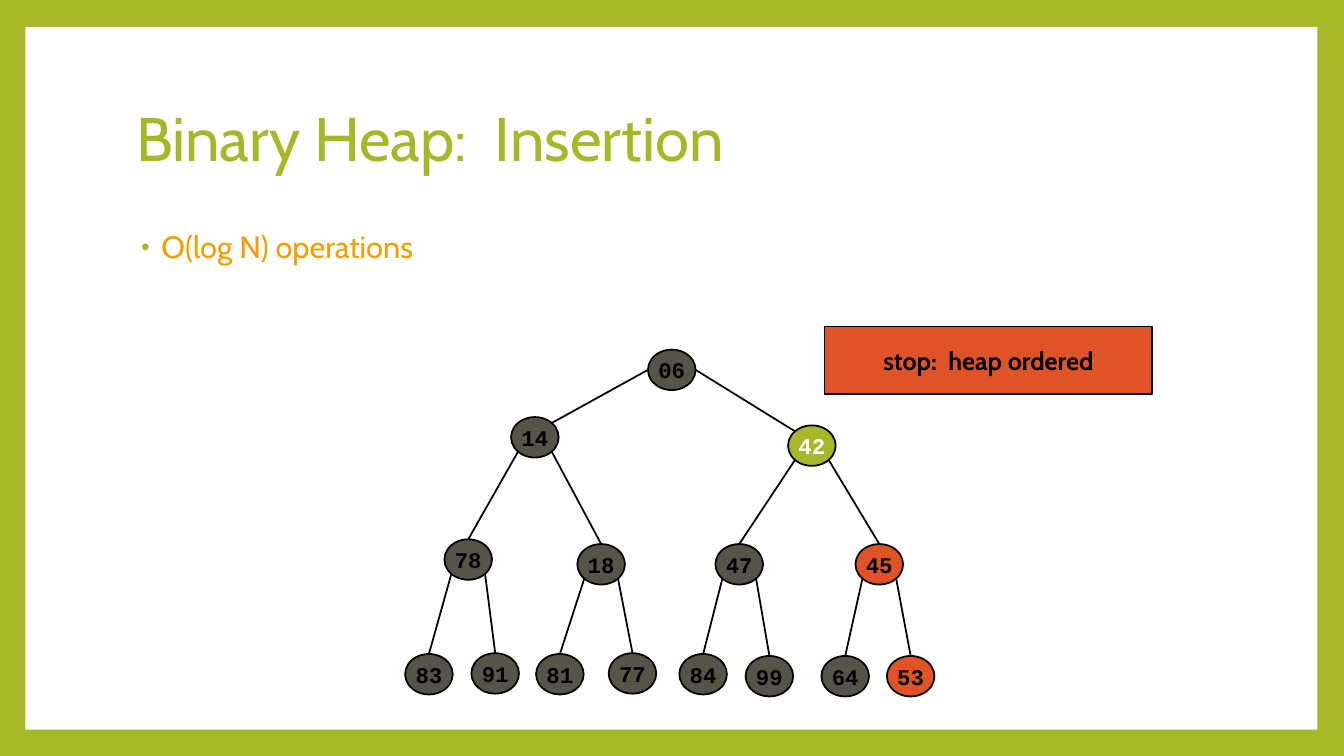
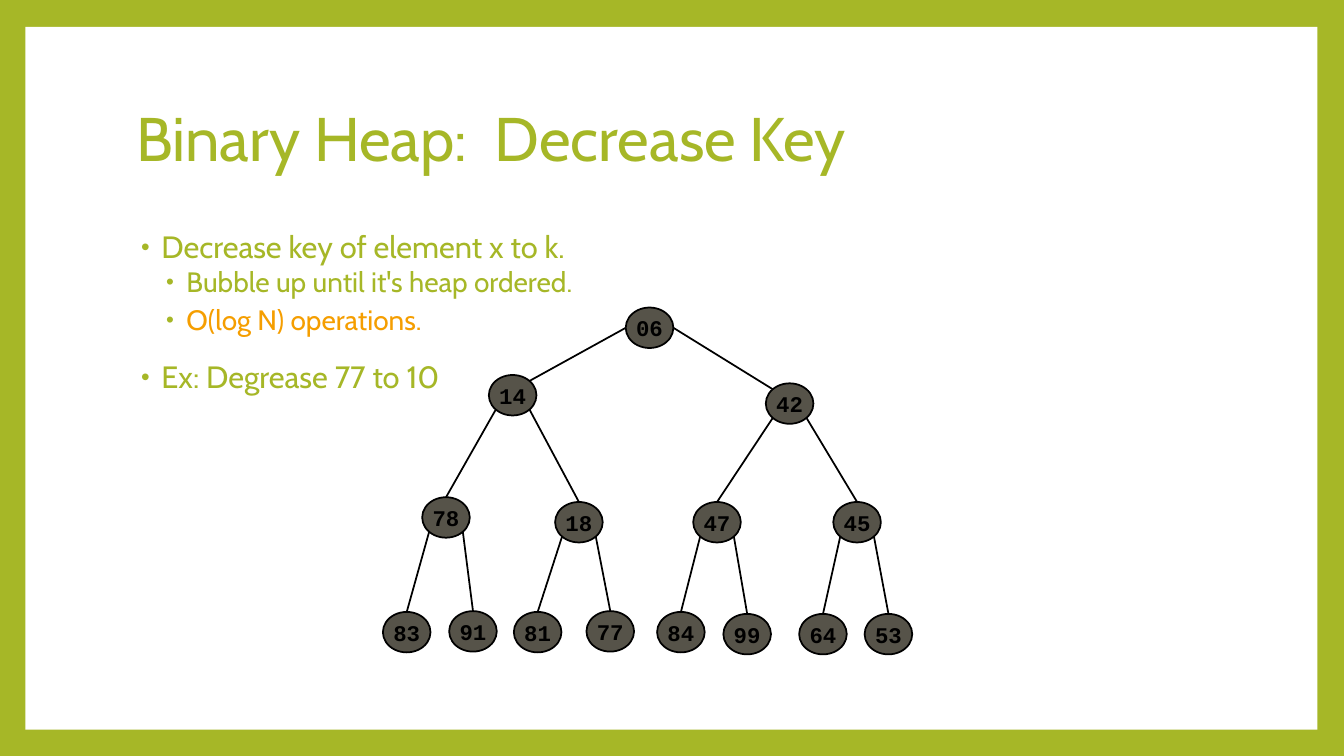
from dataclasses import dataclass, field
from math import sqrt

from lxml import etree
from pptx import Presentation
from pptx.dml.color import RGBColor
from pptx.enum import shapes, text
from pptx.oxml import ns
from pptx.util import Cm, Pt

GREEN = RGBColor(0xA6, 0xB7, 0x27)
AMBER = RGBColor(0xF5, 0x9E, 0x00)
ORANGE = RGBColor(0xDF, 0x53, 0x27)
GREY = RGBColor(0x56, 0x53, 0x49)
BLACK = RGBColor(0, 0, 0)
WHITE = RGBColor(0xFF, 0xFF, 0xFF)

BODY_FONT = "Cabin"
KEY_FONT = "Courier New"
OUTLINE = Pt(1.25)
NODE_WIDTH, NODE_HEIGHT = 1.2, 1.02
DIAGONAL = 1 / sqrt(2)


@dataclass(frozen=True)
class Node:
    """A heap key and its centre, in cm from the centre of the root."""
    key: str
    x: float
    y: float


@dataclass(frozen=True)
class Bullet:
    wording: str
    level: int = 0
    color: RGBColor = GREEN


@dataclass(frozen=True)
class BulletStyle:
    size: int
    indent: float
    before: int
    after: int


@dataclass(frozen=True)
class NodeColors:
    fill: RGBColor = GREY
    key: RGBColor = BLACK


@dataclass(frozen=True)
class HeapSlide:
    title: str
    bullets: list[Bullet]
    root: tuple[float, float]
    highlights: dict[str, NodeColors] = field(default_factory=dict)
    callout: str = ""


BULLET_STYLES = [BulletStyle(22, 0.64, 14, 0), BulletStyle(20, 1.27, 2, 4)]

# Array order: the parent of node i is node (i - 1) // 2.
HEAP = [
    Node("06", 0, 0),
    Node("14", -3.45, 1.7), Node("42", 3.53, 1.91),
    Node("78", -5.13, 4.78), Node("18", -1.78, 4.9),
    Node("47", 1.7, 4.9), Node("45", 5.23, 4.9),
    Node("83", -6.12, 7.67), Node("91", -4.45, 7.65),
    Node("81", -2.82, 7.67), Node("77", -0.99, 7.65),
    Node("84", 0.79, 7.67), Node("99", 2.46, 7.72),
    Node("64", 4.37, 7.72), Node("53", 6.02, 7.72),
]

SLIDES = [
    HeapSlide(
        "Binary Heap:  Insertion",
        [Bullet("O(log N) operations", color=AMBER)],
        root=(16.93, 9.32),
        highlights={"42": NodeColors(GREEN, WHITE),
                    "45": NodeColors(ORANGE), "53": NodeColors(ORANGE)},
        callout="stop:  heap ordered",
    ),
    HeapSlide(
        "Binary Heap:  Decrease Key",
        [Bullet("Decrease key of element x to k."),
         Bullet("Bubble up until it's heap ordered.", 1),
         Bullet("O(log N) operations.", 1, AMBER),
         Bullet("Ex: Degrease 77 to 10")],
        root=(16.37, 8.26),
    ),
]


def style_runs(paragraph, size: float, color: RGBColor,
               font: str = BODY_FONT, bold: bool = False) -> None:
    for run in paragraph.runs:
        run.font.name = font
        run.font.size = Pt(size)
        run.font.bold = bold
        run.font.color.rgb = color


def add_filled(slide, kind, left: float, top: float, width: float,
               height: float, fill: RGBColor, outlined: bool = True):
    shape = slide.shapes.add_shape(kind, Cm(left), Cm(top), Cm(width), Cm(height))
    shape.shadow.inherit = False
    shape.fill.solid()
    shape.fill.fore_color.rgb = fill
    if outlined:
        shape.line.color.rgb = BLACK
        shape.line.width = OUTLINE
    else:
        shape.line.fill.background()
    return shape


def write_centered(shape, wording: str, size: float, color: RGBColor, font: str) -> None:
    frame = shape.text_frame
    frame.word_wrap = False
    frame.vertical_anchor = text.MSO_ANCHOR.MIDDLE
    frame.margin_left = frame.margin_right = 0
    frame.margin_top = frame.margin_bottom = 0
    frame.text = wording
    paragraph = frame.paragraphs[0]
    paragraph.alignment = text.PP_ALIGN.CENTER
    style_runs(paragraph, size, color, font, bold=True)


def add_text_area(slide, top: float, height: float):
    area = slide.shapes.add_textbox(Cm(3.18), Cm(top), Cm(27.43), Cm(height))
    area.text_frame.word_wrap = True
    return area.text_frame


def add_title(slide, wording: str) -> None:
    title = add_text_area(slide, 1.7, 3.76)
    title.vertical_anchor = text.MSO_ANCHOR.MIDDLE
    title.text = wording
    title.paragraphs[0].line_spacing = 0.9
    style_runs(title.paragraphs[0], 44, GREEN)


def set_bullet_mark(paragraph, indent: float) -> None:
    properties = paragraph._p.get_or_add_pPr()
    properties.set("marL", str(Cm(indent)))
    properties.set("indent", str(Cm(-0.51)))
    color = etree.SubElement(properties, ns.qn("a:buClr"))
    etree.SubElement(color, ns.qn("a:srgbClr"), val=str(GREEN))
    etree.SubElement(properties, ns.qn("a:buSzPct"), val="80000")
    etree.SubElement(properties, ns.qn("a:buFont"), typeface="Arial")
    etree.SubElement(properties, ns.qn("a:buChar"), char="•")


def add_bullets(slide, bullets: list[Bullet]) -> None:
    body = add_text_area(slide, 5.72, 11.23)
    body.text = "\n".join(bullet.wording for bullet in bullets)
    for paragraph, bullet in zip(body.paragraphs, bullets):
        style = BULLET_STYLES[bullet.level]
        paragraph.level = bullet.level
        paragraph.line_spacing = 0.9
        paragraph.space_before = Pt(style.before)
        paragraph.space_after = Pt(style.after)
        set_bullet_mark(paragraph, style.indent)
        style_runs(paragraph, style.size, bullet.color)


def rim_point(node: Node, across: float, down: float) -> tuple[float, float]:
    """Point of a node's ellipse in the given direction from its centre."""
    return node.x + across * NODE_WIDTH / 2, node.y + down * NODE_HEIGHT / 2


def add_edge(slide, root: tuple[float, float], child_index: int) -> None:
    parent_index = (child_index - 1) // 2
    parent, child = HEAP[parent_index], HEAP[child_index]
    side = -1 if child_index % 2 else 1
    if parent_index == 0:
        start = rim_point(parent, side, 0)
        end = rim_point(child, -side * DIAGONAL, -DIAGONAL)
    else:
        start = rim_point(parent, side * DIAGONAL, DIAGONAL)
        end = rim_point(child, 0, -1)
    ends = [Cm(offset + origin) for point in (start, end)
            for offset, origin in zip(point, root)]
    edge = slide.shapes.add_connector(shapes.MSO_CONNECTOR.STRAIGHT, *ends)
    edge.line.color.rgb = BLACK
    edge.line.width = OUTLINE
    etree.SubElement(edge._element.spPr, ns.qn("a:effectLst"))


def add_heap(slide, root: tuple[float, float], highlights: dict[str, NodeColors]) -> None:
    for child_index in range(1, len(HEAP)):
        add_edge(slide, root, child_index)
    for node in HEAP:
        colors = highlights.get(node.key, NodeColors())
        circle = add_filled(slide, shapes.MSO_SHAPE.OVAL,
                            root[0] + node.x - NODE_WIDTH / 2,
                            root[1] + node.y - NODE_HEIGHT / 2,
                            NODE_WIDTH, NODE_HEIGHT, colors.fill)
        write_centered(circle, node.key, 16, colors.key, KEY_FONT)


def add_heap_slide(deck, content: HeapSlide) -> None:
    slide = deck.slides.add_slide(deck.slide_layouts[6])
    add_filled(slide, shapes.MSO_SHAPE.RECTANGLE, 0.64, 0.68, 32.56, 17.71,
               WHITE, outlined=False)
    add_title(slide, content.title)
    add_bullets(slide, content.bullets)
    add_heap(slide, content.root, content.highlights)
    if content.callout:
        callout = add_filled(slide, shapes.MSO_SHAPE.RECTANGLE,
                             20.78, 8.23, 8.26, 1.7, ORANGE)
        write_centered(callout, content.callout, 18, BLACK, BODY_FONT)


def main() -> None:
    deck = Presentation()
    deck.slide_width, deck.slide_height = Cm(33.87), Cm(19.05)
    border = deck.slide_master.background.fill
    border.solid()
    border.fore_color.rgb = GREEN
    for content in SLIDES:
        add_heap_slide(deck, content)
    deck.save("out.pptx")


if __name__ == "__main__":
    main()
